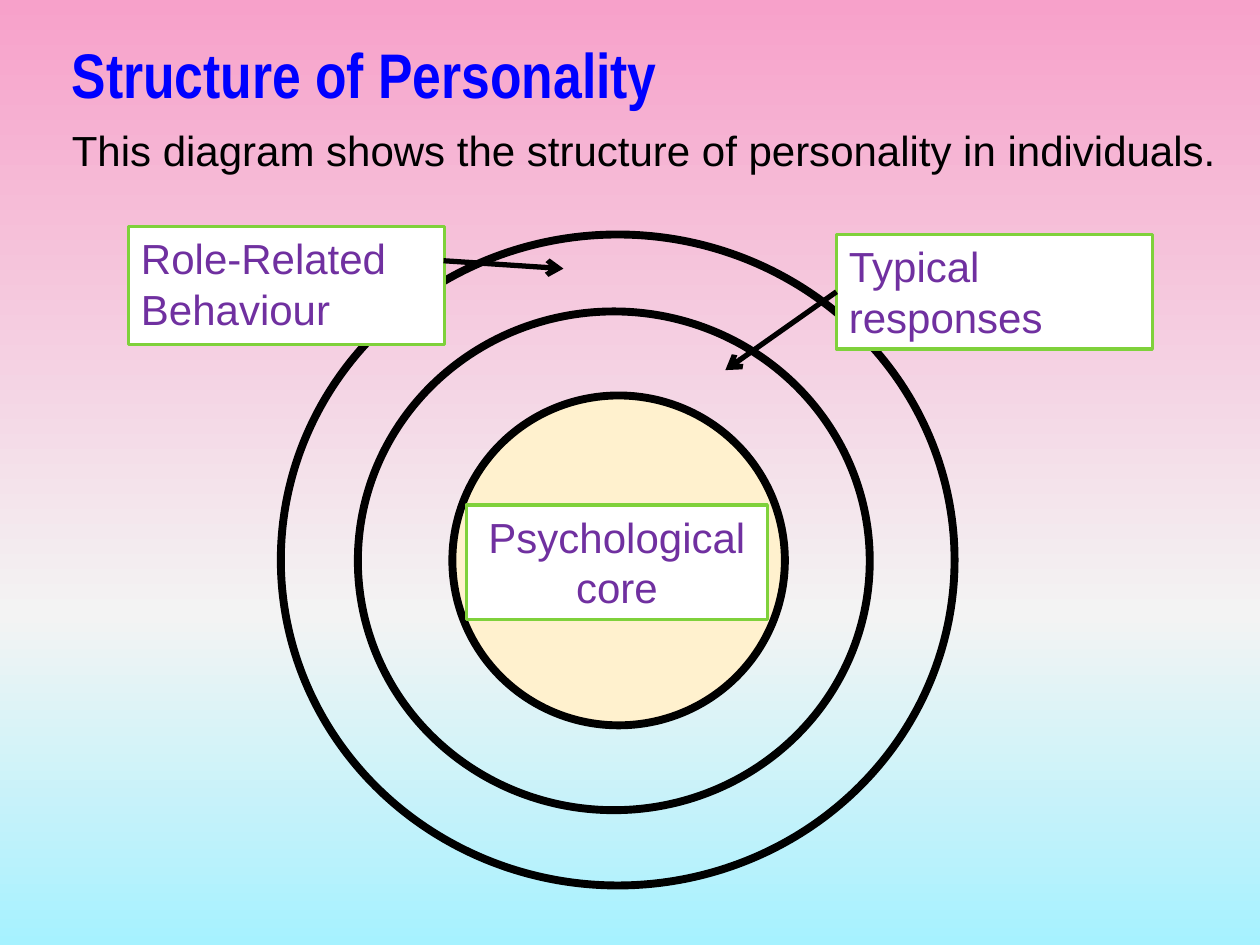
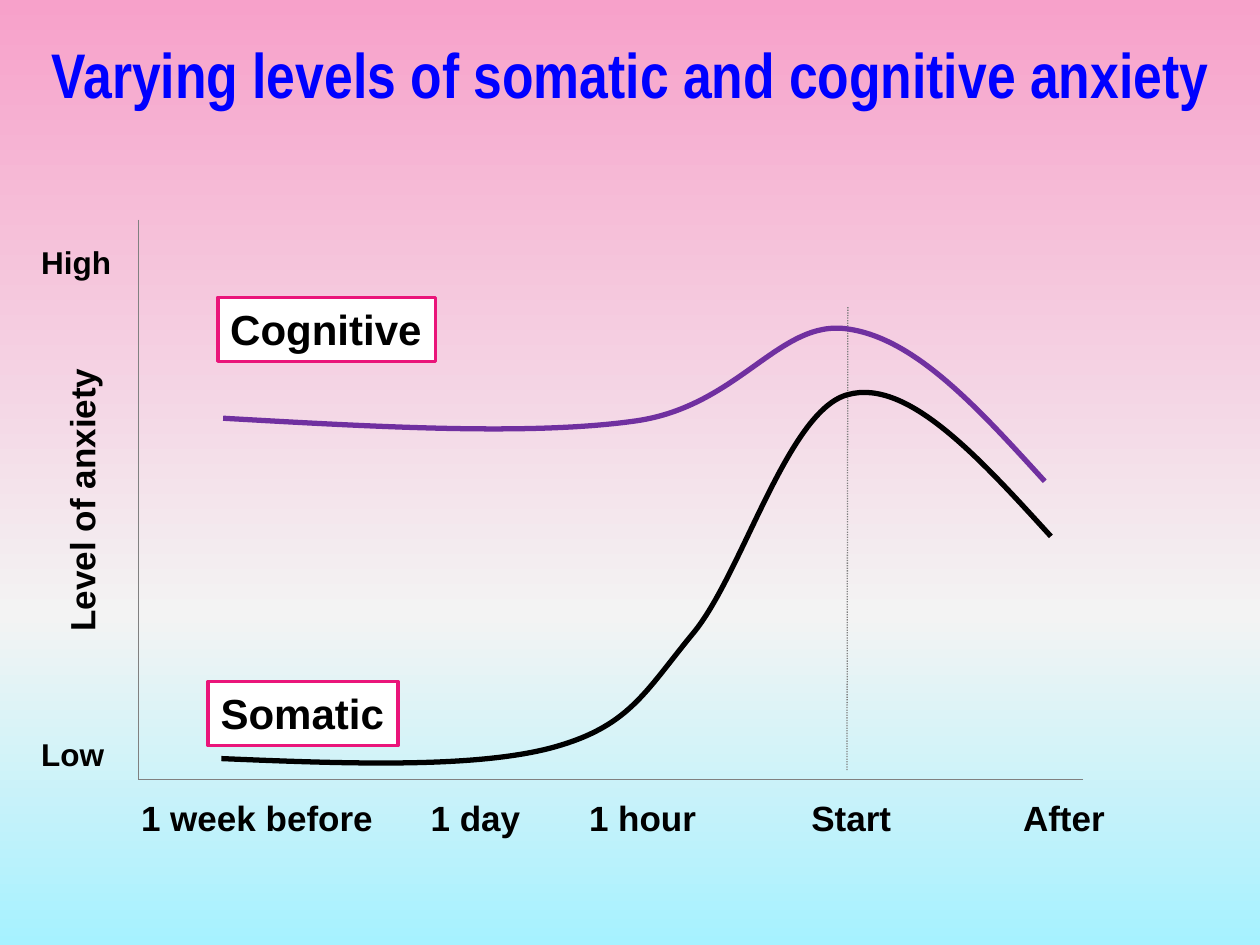
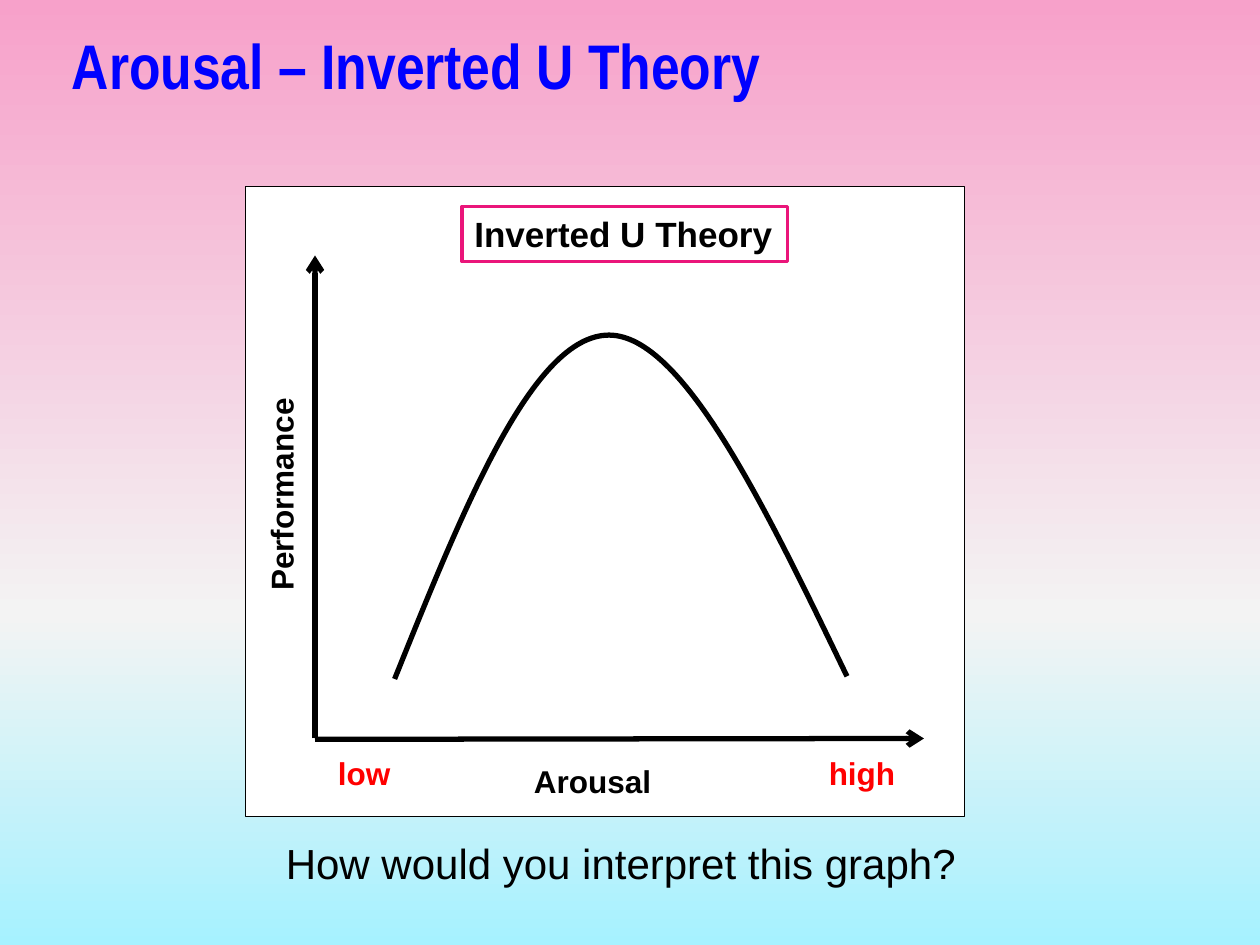
from copy import deepcopy
from dataclasses import dataclass

from lxml.etree import SubElement
from pptx import Presentation
from pptx.dml.color import RGBColor
from pptx.enum.dml import MSO_LINE
from pptx.enum.shapes import MSO_CONNECTOR, MSO_SHAPE
from pptx.enum.text import MSO_ANCHOR, MSO_AUTO_SIZE, PP_ALIGN
from pptx.oxml.ns import qn
from pptx.util import Pt

LEFT, CENTER = PP_ALIGN.LEFT, PP_ALIGN.CENTER
TOP = MSO_ANCHOR.TOP
GROW = MSO_AUTO_SIZE.SHAPE_TO_FIT_TEXT
RECTANGLE, OVAL = MSO_SHAPE.RECTANGLE, MSO_SHAPE.OVAL
STRAIGHT = MSO_CONNECTOR.STRAIGHT
DOTTED = MSO_LINE.ROUND_DOT
LEFT_SIDE = 1


@dataclass(frozen=True)
class Theme:
    """Colours, fonts and sizes shared by all slides."""

    background: tuple = ((0, "F7A1CA"), (0.65, "F3F3F3"), (1, "A6F2FF"))
    title_color: str = "0000FF"
    ink: str = "000000"
    paper: str = "FFFFFF"
    purple: str = "7030A0"
    green: str = "7FD13B"
    pink: str = "EA157A"
    cream: str = "FFF1CE"
    gray: str = "808080"
    red: str = "FF0000"
    title_font: str = "Arial Narrow"
    body_font: str = "Arial"
    title_size: float = 36
    body_size: float = 24
    label_size: float = 20
    small_size: float = 18
    thin: float = 0.75
    border: float = 2
    curve: float = 3
    ring: float = 4.5


THEME = Theme()


def rgb(color):
    """Turn a hex string into a colour."""
    return RGBColor.from_string(color)


def write(shape, text, size=THEME.body_size, color=THEME.ink, bold=False,
          font=THEME.body_font, align=LEFT, wrap=True, tabs=()):
    """Write one formatted paragraph into a shape."""
    frame = shape.text_frame
    frame.word_wrap = wrap
    frame.auto_size = GROW
    frame.vertical_anchor = TOP
    paragraph = frame.paragraphs[0]
    paragraph.alignment = align
    if tabs:
        properties = paragraph._p.get_or_add_pPr()
        tab_list = SubElement(properties, qn("a:tabLst"))
        for position in tabs:
            SubElement(tab_list, qn("a:tab"), pos=str(Pt(position)), algn="l")
    run = paragraph.add_run()
    run.text = text
    run.font.size = Pt(size)
    run.font.name = font
    run.font.bold = bold
    run.font.color.rgb = rgb(color)


class Deck:
    """Holds the presentation, its theme and the current slide."""

    def __init__(self, theme):
        """Set the page size and the shared background."""
        self.theme = theme
        self.presentation = Presentation()
        self.presentation.slide_width = Pt(720)
        self.presentation.slide_height = Pt(540)
        self.slide = None
        self.paint_background()

    def paint_background(self):
        """Give the master a vertical gradient."""
        master = self.presentation.slide_master
        fill = master.background.fill
        fill.gradient()
        fill.gradient_angle = 270
        stop_list = next(master.element.iter(qn("a:gsLst")))
        stop_list.append(deepcopy(stop_list[0]))
        for stop, (position, color) in zip(fill.gradient_stops, self.theme.background):
            stop.position = position
            stop.color.rgb = rgb(color)

    def add_slide(self, title, left, top, width):
        """Start a blank slide with a title."""
        self.slide = self.presentation.slides.add_slide(self.presentation.slide_layouts[6])
        self.text(title, left, top, width, 51, size=self.theme.title_size, bold=True,
                  color=self.theme.title_color, font=self.theme.title_font, wrap=False)

    def text(self, text, left, top, width, height, rotation=0, **style):
        """Add a text box."""
        box = self.slide.shapes.add_textbox(Pt(left), Pt(top), Pt(width), Pt(height))
        box.rotation = rotation
        write(box, text, **style)

    def label(self, text, left, top, width, height=29, **style):
        """Add a small bold label."""
        self.text(text, left, top, width, height,
                  **{"size": self.theme.small_size, "bold": True, **style})

    def shape(self, kind, left, top, width, height, line, weight, fill=None):
        """Add an outlined preset shape."""
        shape = self.slide.shapes.add_shape(kind, Pt(left), Pt(top), Pt(width), Pt(height))
        self.outline(shape, line, weight)
        if fill:
            shape.fill.solid()
            shape.fill.fore_color.rgb = rgb(fill)
        return shape

    def outline(self, shape, color, weight):
        """Leave only a plain outline on a shape."""
        shape.shadow.inherit = False
        shape.fill.background()
        shape.line.color.rgb = rgb(color)
        shape.line.width = Pt(weight)

    def box(self, text, left, top, width, height, line, **style):
        """Add a white bordered box with text."""
        box = self.shape(RECTANGLE, left, top, width, height, line,
                         self.theme.border, self.theme.paper)
        write(box, text, **style)
        return box

    def line(self, start, end, color, weight, dash=None):
        """Add a straight connector."""
        connector = self.slide.shapes.add_connector(STRAIGHT, *map(Pt, start + end))
        connector.line.color.rgb = rgb(color)
        connector.line.width = Pt(weight)
        if dash:
            connector.line.dash_style = dash
        SubElement(connector._element.spPr, qn("a:effectLst"))
        return connector

    def arrow(self, start, end):
        """Add a thick connector with an open arrowhead."""
        connector = self.line(start, end, self.theme.ink, self.theme.curve)
        SubElement(connector.line._get_or_add_ln(), qn("a:tailEnd"), type="arrow")
        return connector

    def curve(self, points, color):
        """Draw cubic curves through a start point and triples of points."""
        scaled = [(Pt(x), Pt(y)) for x, y in points]
        builder = self.slide.shapes.build_freeform(*scaled[0])
        builder.add_line_segments(scaled[1:], close=False)
        shape = builder.convert_to_shape()
        self.outline(shape, color, self.theme.curve)
        path = next(shape._element.iter(qn("a:path")))
        segments = path.findall(qn("a:lnTo"))
        for index in range(0, len(segments), 3):
            cubic = SubElement(path, qn("a:cubicBezTo"))
            for segment in segments[index:index + 3]:
                cubic.append(segment[0])
                path.remove(segment)


def build_structure(deck):
    """Build the rings of personality."""
    theme = deck.theme
    deck.add_slide("Structure of Personality", 34, 16.5, 353)
    rings = (
        (258.5, 226, 190, 188.5, theme.cream),
        (204.5, 178, 292.5, 285, None),
        (160.5, 134, 385, 372, None),
    )
    for *place, fill in rings:
        deck.shape(OVAL, *place, theme.ink, theme.ring, fill)
    deck.box("Psychological core", 266.5, 288.5, 172, 65.5, theme.green,
             color=theme.purple, align=CENTER)
    responses = deck.box("Typical responses", 478, 134, 180.5, 65.5, theme.green,
                         color=theme.purple)
    deck.box("Role-Related Behaviour", 73.5, 129.5, 180.5, 67.5, theme.green,
             color=theme.purple)
    deck.arrow((253.5, 149), (322, 153.5))
    deck.arrow((478, 167), (414.5, 211.5)).begin_connect(responses, LEFT_SIDE)
    deck.text("This diagram shows the structure of personality in individuals.",
              34, 67.5, 669.5, 36.5)


def build_anxiety(deck):
    """Build the graph of anxiety over time."""
    theme = deck.theme
    deck.add_slide("Varying levels of somatic and cognitive anxiety", 22.5, 16.5, 682)
    origin = (79, 445.5)
    deck.line((79, 125.5), origin, theme.gray, theme.thin)
    deck.line((619, 445.5), origin, theme.gray, theme.thin)
    deck.label("1 week before\t1 day\t1 hour\tStart\tAfter", 73.5, 451.5, 630, 31.5,
               size=theme.label_size, tabs=(165.5, 256, 383, 504))
    deck.line((484.5, 175.5), (484, 440.5), theme.gray, theme.thin, DOTTED)
    for text, top in (("High", 135.5), ("Low", 416.5)):
        deck.label(text, 16.5, top, 56)
    deck.label("Level of anxiety", -36, 269.5, 165.5, 31.5, rotation=270,
               size=theme.label_size, wrap=False)
    cognitive = (
        (127.5, 239),
        (216, 244), (304, 249), (363.5, 240.5),
        (422.5, 232), (445.5, 182), (484.5, 188),
        (523.5, 193.5), (560, 234.5), (597, 275),
    )
    somatic = (
        (126.5, 433.5),
        (198, 436.5), (270, 439), (314.5, 427.5),
        (359.5, 415.5), (368, 396), (396, 362),
        (424, 328.5), (450, 234.5), (484.5, 225.5),
        (518.5, 216), (559.5, 261.5), (600.5, 306.5),
    )
    deck.curve(cognitive, theme.purple)
    deck.curve(somatic, theme.ink)
    for text, left, top, width in (("Cognitive", 124.5, 170, 124.5),
                                   ("Somatic", 119, 389.5, 108.5)):
        deck.box(text, left, top, width, 36.5, theme.pink, bold=True, wrap=False)


def build_arousal(deck):
    """Build the inverted U graph."""
    theme = deck.theme
    deck.add_slide("Arousal – Inverted U Theory", 34, 11.5, 412)
    deck.text("How would you interpret this graph?", 34, 475, 641.5, 36.5, align=CENTER)
    deck.shape(RECTANGLE, 140.5, 106.5, 410.5, 360, theme.ink, theme.thin, theme.paper)
    deck.arrow((180, 422), (180, 146))
    deck.label("Performance", 84, 253.5, 153.5, rotation=270)
    deck.label("Arousal", 298, 432, 101.5)
    deck.label("low", 186, 427.5, 101.5, color=theme.red)
    deck.label("high", 466.5, 427.5, 73.5, color=theme.red)
    deck.box("Inverted U Theory", 264, 118, 186, 31.5, theme.pink,
             size=theme.label_size, bold=True)
    performance = (
        (225.5, 388),
        (265, 290), (304.5, 191.5), (348, 191.5),
        (390, 191.5), (437, 289), (484, 386.5),
    )
    deck.curve(performance, theme.ink)
    deck.arrow((180, 422.5), (528, 422))


def main():
    """Build and save the presentation."""
    deck = Deck(THEME)
    build_structure(deck)
    build_anxiety(deck)
    build_arousal(deck)
    deck.presentation.save("out.pptx")


if __name__ == "__main__":
    main()
